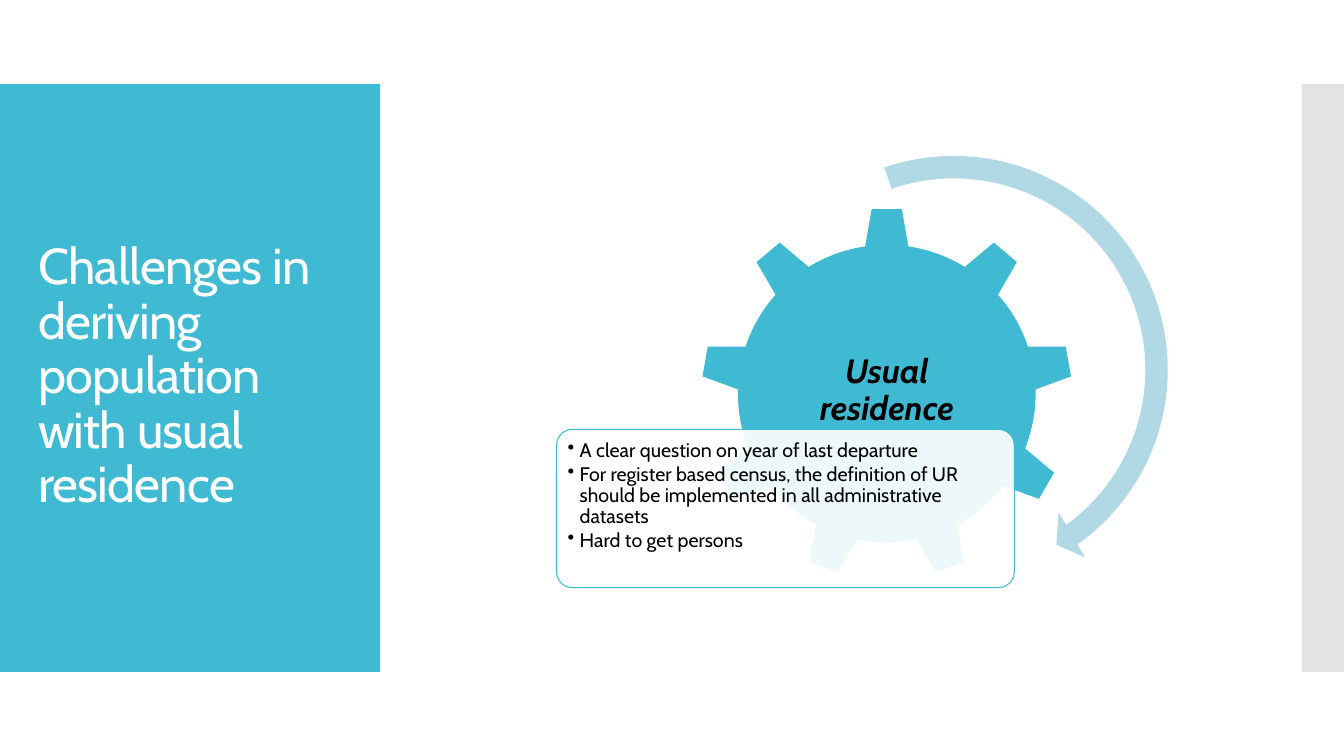
from lxml import etree
from pptx import Presentation
from pptx.dml.color import RGBColor
from pptx.enum.shapes import MSO_SHAPE
from pptx.enum.text import MSO_ANCHOR, MSO_AUTO_SIZE, PP_ALIGN
from pptx.oxml.ns import qn
from pptx.util import Emu, Inches, Pt

RECT, GEAR = MSO_SHAPE.RECTANGLE, MSO_SHAPE.GEAR_9
ROUNDED, ARC_ARROW = MSO_SHAPE.ROUNDED_RECTANGLE, MSO_SHAPE.CIRCULAR_ARROW
LEFT, CENTER = PP_ALIGN.LEFT, PP_ALIGN.CENTER
TOP, MIDDLE = MSO_ANCHOR.TOP, MSO_ANCHOR.MIDDLE
COLORS = {"teal": "40BAD2", "pale": "B0D9E5", "grey": "C8C8C8",
          "white": "FFFFFF", "black": "000000"}

prs = Presentation()
prs.slide_width, prs.slide_height = Inches(13.33), Inches(7.5)
W, H = prs.slide_width, prs.slide_height
slide = prs.slides.add_slide(prs.slide_layouts[5])  # Title Only


def add_block(kind, box, color, opacity=100):
    block = slide.shapes.add_shape(kind, *box)
    block.shadow.inherit = False
    block.fill.solid()
    block.fill.fore_color.rgb = RGBColor.from_string(COLORS[color])
    block.line.fill.background()
    if opacity < 100:
        srgb = block.fill._xPr.find(".//" + qn("a:srgbClr"))
        etree.SubElement(srgb, qn("a:alpha"), val=str(opacity * 1000))
    return block


def write(holder, lines, size, color, align, anchor, inset):
    frame = holder.text_frame
    frame.text = "\n".join(lines)
    frame.word_wrap = True
    frame.auto_size = MSO_AUTO_SIZE.NONE
    frame.vertical_anchor = anchor
    frame.margin_left = frame.margin_right = Inches(inset)
    frame.margin_top = frame.margin_bottom = Inches(min(inset, 0.06))
    for line in frame.paragraphs:
        line.alignment, line.line_spacing = align, 0.9
        line.font.name, line.font.size = "Cabin", Pt(size)
        line.font.color.rgb = RGBColor.from_string(COLORS[color])
    return frame.paragraphs


# Side panels: the middle seven ninths of the slide's height
panel_top, panel_height = H // 9, H * 7 // 9
title_width, edge_width = Inches(3.77), W // 32
add_block(RECT, (0, panel_top, title_width, panel_height), "teal")
add_block(RECT, (W - edge_width, panel_top, edge_width, panel_height), "grey", 50)

# Title, brought in front of its panel
title = slide.shapes.title
slide.shapes._spTree.append(title._element)
title.left, title.top = Inches(0.28), Inches(1.23)
title.width, title.height = Inches(3.22), Inches(5.03)
heading = write(title, ["Challenges in deriving population with usual residence"],
                36, "white", LEFT, MIDDLE, 0.1)[0]
heading.runs[0].font._element.set("spc", "-60")

# Gear with its label
gear_left, gear_top, gear_size = Inches(6.95), Inches(2.06), Inches(3.69)
add_block(GEAR, (gear_left, gear_top, gear_size, gear_size), "teal")
label_width = Emu(int(gear_size * 0.6))
gear_label = slide.shapes.add_textbox(gear_left + (gear_size - label_width) // 2,
                                      Inches(2.93), label_width, Inches(1.9))
label_line = write(gear_label, ["Usual residence"], 24, "black", CENTER, MIDDLE, 0.03)[0]
label_line.font.bold = label_line.font.italic = True

# Card with the challenges
card_left, card_top = Inches(5.52), Inches(4.26)
card_width, card_height, pad = Inches(4.54), Inches(1.57), Inches(0.05)
card = add_block(ROUNDED, (card_left, card_top, card_width, card_height), "white", 90)
card.adjustments[0] = 0.1
card.line.color.rgb = RGBColor.from_string(COLORS["teal"])
card.line.width = Pt(0.75)
challenges = slide.shapes.add_textbox(card_left + pad, card_top + pad,
                                      card_width - 2 * pad, card_height - 2 * pad)
for challenge in write(challenges, [
        "A clear question on year of last departure",
        "For register based census, the definition of UR should be implemented "
        "in all administrative datasets",
        "Hard to get persons"], 14, "black", LEFT, TOP, 0.06):
    challenge.space_after = Pt(2)
    props = challenge._p.get_or_add_pPr()
    props.set("marL", str(Inches(0.12)))
    props.set("indent", str(-Inches(0.12)))
    bullet = etree.Element(qn("a:buChar"), char="•")
    props.find(qn("a:defRPr")).addprevious(bullet)

# Arrow sweeping around the gear
sweep = add_block(ARC_ARROW, (Inches(7.19), Inches(1.4), card_width, card_width), "pale")
for i, value in enumerate((0.049, 3.126, 32.639, 150.64, 0.057)):
    sweep.adjustments[i] = value

prs.save("out.pptx")
